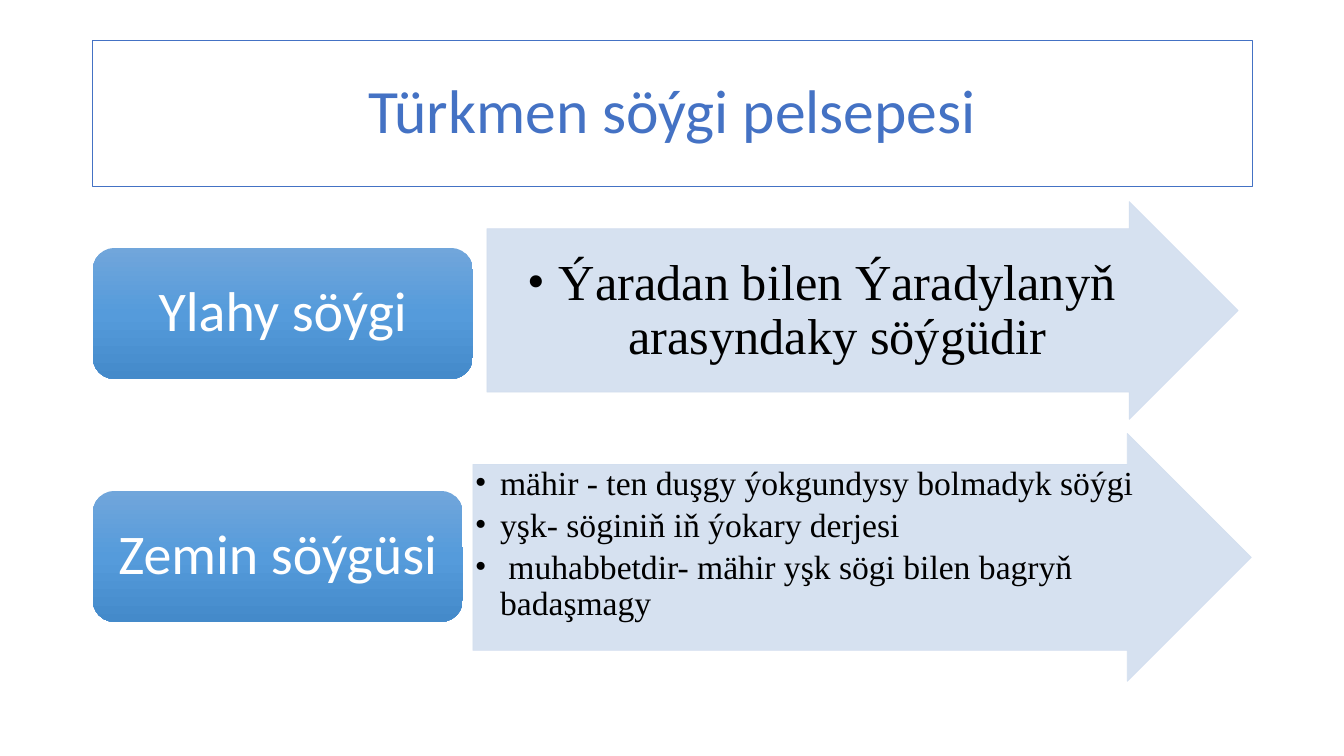
from copy import deepcopy
from dataclasses import dataclass
from lxml.etree import SubElement
from pptx import Presentation
from pptx.dml.color import RGBColor
from pptx.enum.shapes import MSO_SHAPE
from pptx.enum.text import MSO_ANCHOR, MSO_AUTO_SIZE, PP_ALIGN
from pptx.oxml.ns import qn
from pptx.util import Inches, Pt


@dataclass(frozen=True)
class Theme:
    accent: str = "4472C4"
    arrow: str = "D2DEEF"
    gradient: tuple = ("71A6DB", "559BDB", "448ACA")
    light: str = "FFFFFF"
    dark: str = "000000"
    heading_font: str = "Calibri"
    body_font: str = "Times New Roman"
    title_size: int = 44
    label_size: int = 40
    pair_size: int = 36
    list_size: int = 24


THEME = Theme()


def write(para, text, font, size, color, align):
    para.alignment = align
    para.line_spacing = 0.9
    span = para.add_run()
    span.text = text
    span.font.name = font
    span.font.size = Pt(size)
    span.font.color.rgb = RGBColor.from_string(color)


def set_insets(frame, left, top, right, bottom):
    frame.word_wrap = True
    frame.margin_left = Inches(left)
    frame.margin_top = Inches(top)
    frame.margin_right = Inches(right)
    frame.margin_bottom = Inches(bottom)


deck = Presentation()
deck.slide_width = Inches(13.33)
deck.slide_height = Inches(7.5)
page = deck.slides.add_slide(deck.slide_layouts[5])

title = page.shapes.title
title.left, title.top = Inches(0.92), Inches(0.4)
title.width, title.height = Inches(11.5), Inches(1.45)
title.line.color.rgb = RGBColor.from_string(THEME.accent)
title.line.width = Pt(0.75)
title.text_frame.auto_size = MSO_AUTO_SIZE.NONE
title.text_frame.vertical_anchor = MSO_ANCHOR.MIDDLE
write(title.text_frame.paragraphs[0], "Türkmen söýgi pelsepesi",
      THEME.heading_font, THEME.title_size, THEME.accent, PP_ALIGN.CENTER)

rows = [
    {"label": "Ylahy söýgi", "label_box": (0.92, 2.46, 3.77, 1.3),
     "arrow_box": (4.83, 2, 7.45, 2.16), "inset": 0.01, "top_inset": 0.28,
     "size": THEME.pair_size, "indent": 0.31, "align": PP_ALIGN.CENTER,
     "points": ["Ýaradan bilen Ýaradylanyň arasyndaky söýgüdir"]},
    {"label": "Zemin söýgüsi", "label_box": (0.92, 4.87, 3.67, 1.3),
     "arrow_box": (4.69, 4.3, 7.72, 2.46), "inset": 0.02, "top_inset": 0.02,
     "size": THEME.list_size, "indent": 0.25, "align": PP_ALIGN.LEFT,
     "points": ["mähir - ten duşgy ýokgundysy bolmadyk söýgi",
                "yşk- söginiň iň ýokary derjesi",
                " muhabbetdir- mähir yşk sögi bilen bagryň badaşmagy"]},
]

for row in rows:
    arrow = page.shapes.add_shape(MSO_SHAPE.RIGHT_ARROW, *map(Inches, row["arrow_box"]))
    arrow.shadow.inherit = False
    arrow.adjustments[0] = 0.75
    arrow.adjustments[1] = 0.5
    arrow.fill.solid()
    arrow.line.width = Pt(0.5)
    for paint in (arrow.fill.fore_color, arrow.line.color):
        paint.rgb = RGBColor.from_string(THEME.arrow)
    for color in arrow._element.spPr.iter(qn("a:srgbClr")):
        SubElement(color, qn("a:alpha"), val="90000")

    frame = arrow.text_frame
    frame.vertical_anchor = MSO_ANCHOR.TOP
    inset = row["inset"]
    set_insets(frame, inset, row["top_inset"], inset, inset)
    for index, point in enumerate(row["points"]):
        para = frame.add_paragraph() if index else frame.paragraphs[0]
        write(para, point, THEME.body_font, row["size"], THEME.dark, row["align"])
        para.space_after = Pt(4)
        properties = para._p.get_or_add_pPr()
        properties.set("marL", str(Inches(row["indent"])))
        properties.set("indent", str(-Inches(row["indent"])))
        SubElement(properties, qn("a:buFont"), typeface=THEME.body_font)
        SubElement(properties, qn("a:buChar"), char="•")

    label = page.shapes.add_shape(MSO_SHAPE.ROUNDED_RECTANGLE, *map(Inches, row["label_box"]))
    label.shadow.inherit = False
    label.line.fill.background()
    label.fill.gradient()
    label.fill.gradient_angle = 270
    stop_list = label._element.spPr.find(qn("a:gradFill")).find(qn("a:gsLst"))
    stop_list.append(deepcopy(stop_list[-1]))
    for index, (stop, color) in enumerate(zip(label.fill.gradient_stops, THEME.gradient)):
        stop.position = index / 2
        stop.color.rgb = RGBColor.from_string(color)
    label.text_frame.vertical_anchor = MSO_ANCHOR.MIDDLE
    set_insets(label.text_frame, 0.17, 0.08, 0.17, 0.08)
    write(label.text_frame.paragraphs[0], row["label"], THEME.heading_font,
          THEME.label_size, THEME.light, PP_ALIGN.CENTER)

deck.save("out.pptx")
